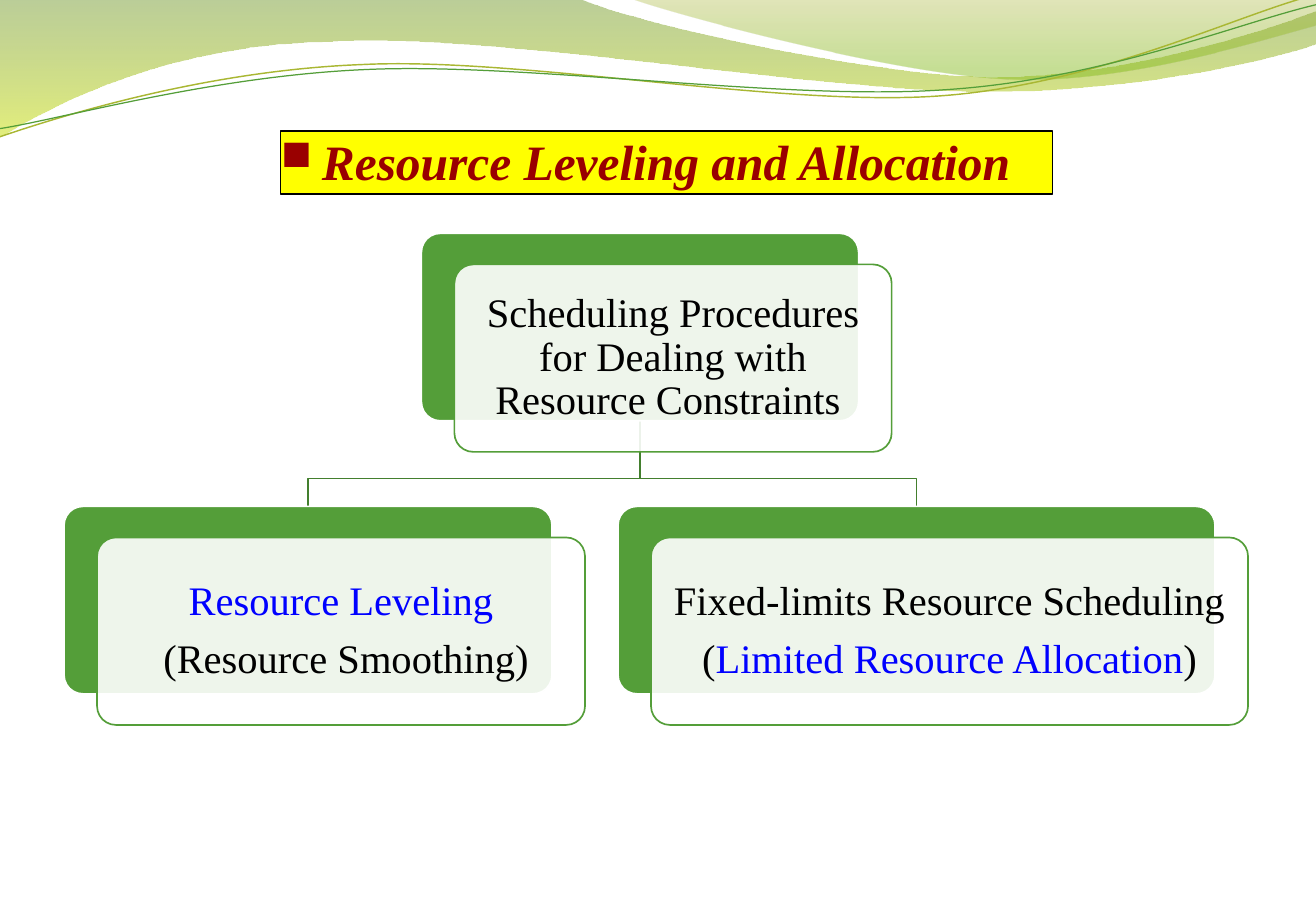
from lxml import etree
from pptx import Presentation
from pptx import util as u
from pptx.dml.color import RGBColor
from pptx.enum import shapes, text
from pptx.oxml.ns import qn

GREEN = RGBColor(0x54, 0x9E, 0x39)
DARK_GREEN = RGBColor(0x43, 0x7F, 0x2E)
OLIVE = RGBColor(0xA9, 0xB7, 0x33)
YELLOW = RGBColor(0xFF, 0xFF, 0x00)
RED = RGBColor(0x99, 0x00, 0x00)
BLUE = RGBColor(0x00, 0x00, 0xFF)
BLACK = RGBColor(0x00, 0x00, 0x00)
WHITE = RGBColor(0xFF, 0xFF, 0xFF)

deck = Presentation()
deck.slide_width, deck.slide_height = u.Cm(27.51), u.Cm(19.05)
page = deck.slides.add_slide(deck.slide_layouts[6])


def outline(start, segments, close=False):
    """Draw lines (x, y) and Bezier curves (three points), all in cm."""
    points = [(u.Cm(x), u.Cm(y)) for segment in segments
              for x, y in zip(segment[::2], segment[1::2])]
    builder = page.shapes.build_freeform(u.Cm(start[0]), u.Cm(start[1]))
    builder.add_line_segments(points, close=close)
    shape = builder.convert_to_shape()
    shape.shadow.inherit = False
    shape.fill.background()
    # Join each three control points into one curve
    steps = iter(list(shape._element.iter(qn("a:lnTo"))))
    for segment in segments:
        group = [next(steps) for _ in segment[::2]]
        if len(group) == 3:
            curve = etree.Element(qn("a:cubicBezTo"))
            group[0].addprevious(curve)
            for step in group:
                curve.append(step[0])
                step.getparent().remove(step)
    return shape


def write(para, words, size=24, color=BLACK, bold=False, italic=False):
    span = para.add_run()
    span.text = words
    span.font.name = "Times New Roman"
    span.font.size = u.Pt(size)
    span.font.color.rgb = color
    span.font.bold, span.font.italic = bold, italic


# Wave bands: start, segments, gradient stops (position, colour, opacity %)
bands = [
    ((0, 0),
     [(12.12, -0.03), (13.08, 0.43, 18.26, 1.6, 20.85, 1.6),
      (23.47, 1.6, 26.37, 0.66, 27.51, 0.23), (27.53, 0.91),
      (27.05, 1.12, 23.93, 1.93, 20.52, 1.91),
      (17.09, 1.91, 10.49, 0.71, 7.06, 0.86),
      (3.56, 0.91, 1.24, 2.11, -0.03, 2.87)],
     [(0, RGBColor(0x69, 0x92, 0x1C), 45), (1, RGBColor(0xCC, 0xE1, 0x0F), 55)]),
    ((13.18, -0.03),
     [(14, 0.28, 18.75, 1.57, 21.13, 1.65),
      (23.55, 1.75, 26.44, 0.81, 27.51, 0.53), (27.51, 0)],
     [(0, RGBColor(0x9B, 0xAA, 0x1A), 30), (0.8, RGBColor(0x81, 0xBA, 0x16), 45)]),
]
for start, segments, stops in bands:
    band = outline(start, segments, close=True)
    band.line.fill.background()
    band.fill.gradient()
    band.fill.gradient_angle = 270
    for stop, (position, color, opacity) in zip(band.fill.gradient_stops, stops):
        stop.position = position
        stop.color.rgb = color
    colors = band.fill._xPr.iter(qn("a:srgbClr"))
    for element, (position, color, opacity) in zip(list(colors), stops):
        etree.SubElement(element, qn("a:alpha"), val=str(opacity * 1000))

# Thin wave lines
waves = [
    ((-0.03, 2.87),
     [(1.32, 2.41, 4.34, 1.47, 7.59, 1.35), (10.87, 1.19, 16.28, 2.24, 19.61, 2.01),
      (22.91, 1.78, 25.81, 0.33, 27.46, -0.1)], OLIVE, 0.85),
    ((0, 2.69),
     [(1.3, 2.49, 4.5, 1.57, 7.77, 1.45), (11.07, 1.32, 16.43, 2.11, 19.71, 1.88),
      (23.01, 1.68, 25.88, 0.48, 27.51, 0.1)], GREEN, 0.75),
]
for start, segments, color, width in waves:
    wave = outline(start, segments)
    wave.line.color.rgb, wave.line.width = color, u.Pt(width)

# Title bar with a square bullet
title = page.shapes.add_shape(shapes.MSO_SHAPE.RECTANGLE,
                              u.Cm(5.87), u.Cm(2.74), u.Cm(16.13), u.Cm(1.32))
title.shadow.inherit = False
title.fill.solid()
title.fill.fore_color.rgb = YELLOW
title.line.color.rgb, title.line.width = BLACK, u.Pt(0.75)
frame = title.text_frame
frame.word_wrap = True
frame.margin_left = frame.margin_right = frame.margin_top = frame.margin_bottom = 0
frame.vertical_anchor = text.MSO_ANCHOR.TOP
para = frame.paragraphs[0]
properties = para._p.get_or_add_pPr()
properties.set("marL", str(u.Cm(0.86)))
properties.set("indent", str(-u.Cm(0.86)))
bullet_color = etree.SubElement(properties, qn("a:buClr"))
etree.SubElement(bullet_color, qn("a:srgbClr"), val=str(RED))
etree.SubElement(properties, qn("a:buSzPct"), val="85000")
etree.SubElement(properties, qn("a:buChar"), char="■")
para.alignment = text.PP_ALIGN.LEFT
write(para, "Resource Leveling and Allocation", size=29.3, color=RED, bold=True, italic=True)

# Tree nodes: left, top, width, paragraphs of (words, colour)
HEIGHT = 3.92
root = (8.81, 4.88, 9.14,
        [[("Scheduling Procedures for Dealing with Resource Constraints ", BLACK)]])
children = [
    (1.34, 10.59, 10.2,
     [[("Resource Leveling", BLUE)], [(" (Resource Smoothing)", BLACK)]]),
    (12.92, 10.59, 12.48,
     [[("Fixed-limits Resource Scheduling", BLACK)],
      [("(", BLACK), ("Limited Resource Allocation", BLUE), (")", BLACK)]]),
]

# Branches from the root to each child
root_middle = root[0] + root[2] / 2
for left, top, width, lines in reversed(children):
    middle, bend = left + width / 2, top - 0.58
    branch = outline((root_middle, root[1] + HEIGHT),
                     [(root_middle, bend), (middle, bend), (middle, top)])
    branch.line.color.rgb, branch.line.width = DARK_GREEN, u.Pt(1)

# Each node is a green plate with a translucent card in front
for left, top, width, lines in [root] + children:
    for offset_x, offset_y, fill, line in [(0, 0, GREEN, WHITE), (0.69, 0.65, WHITE, GREEN)]:
        card = page.shapes.add_shape(shapes.MSO_SHAPE.ROUNDED_RECTANGLE,
                                     u.Cm(left + offset_x), u.Cm(top + offset_y),
                                     u.Cm(width), u.Cm(HEIGHT))
        card.adjustments[0] = 0.1
        card.shadow.inherit = False
        card.fill.solid()
        card.fill.fore_color.rgb = fill
        card.line.color.rgb, card.line.width = line, u.Pt(1)
    tint = card.fill._xPr.find(qn("a:solidFill")).find(qn("a:srgbClr"))
    etree.SubElement(tint, qn("a:alpha"), val="90000")
    frame = card.text_frame
    frame.word_wrap = True
    frame.vertical_anchor = text.MSO_ANCHOR.MIDDLE
    frame.margin_left = frame.margin_right = u.Cm(0.25)
    frame.margin_top = frame.margin_bottom = u.Cm(0.25)
    for index, spans in enumerate(lines):
        para = frame.add_paragraph() if index else frame.paragraphs[0]
        para.alignment = text.PP_ALIGN.CENTER
        para.line_spacing = 0.9
        para.space_after = u.Pt(8.4)
        for words, color in spans:
            write(para, words, color=color)

deck.save("out.pptx")
